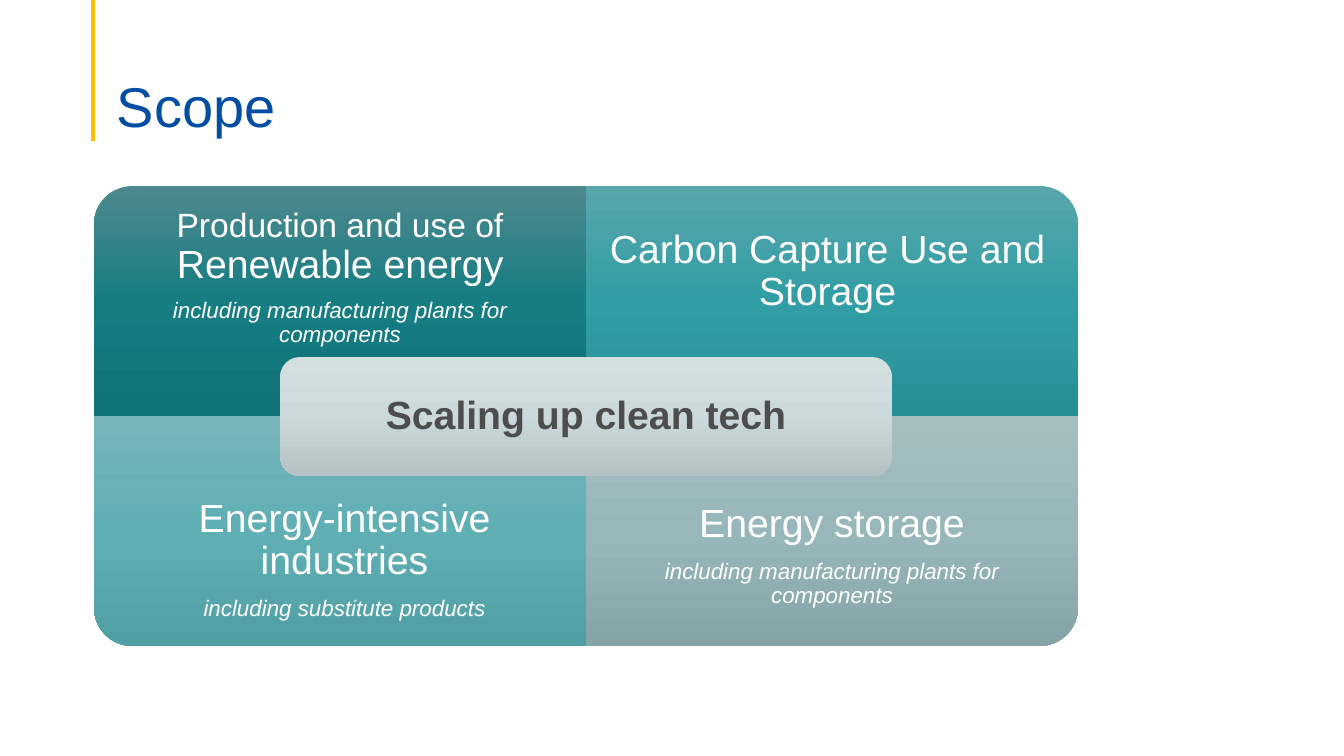
from dataclasses import dataclass

from lxml import etree
from pptx import Presentation, util as u
from pptx.dml.color import RGBColor
from pptx.enum import shapes, text
from pptx.oxml import ns

EMU_PER_PX = 914400 / 100.8
COLOURS = {"title": "034EA2", "rule": "FFC000", "light": "FFFFFF", "dark": "4D4D4D"}
FONT = "Arial"
LEFT, TOP, WIDTH, HEIGHT = 94, 186, 492, 230
PLANTS = "including manufacturing plants for components"


@dataclass(frozen=True)
class Box:
    left: int
    top: int
    width: int
    height: int

    def emu(self) -> list[u.Emu]:
        return [px(n) for n in (self.left, self.top, self.width, self.height)]

    def turned(self) -> "Box":
        """Swap width and height around the same centre."""
        shift = (self.width - self.height) // 2
        return Box(self.left + shift, self.top - shift, self.height, self.width)


@dataclass(frozen=True)
class Run:
    wording: str
    size: int


@dataclass(frozen=True)
class Quadrant:
    column: int
    row: int
    rotation: int
    gradient: tuple[str, str, str]
    text_box: Box
    inset: int
    heading: tuple[Run, ...]
    detail: str = ""


QUADRANTS = (
    Quadrant(0, 0, 270, ("4E898E", "167D83", "0F7379"), Box(94, 196, 492, 164), 19,
             (Run("Production and use of ", 24), Run("Renewable energy", 28)), PLANTS),
    Quadrant(1, 0, 0, ("58A6AC", "319EA5", "279097"), Box(586, 186, 483, 172), 22,
             (Run("Carbon Capture Use and Storage", 28),)),
    Quadrant(0, 1, 180, ("77B4BA", "5FAFB5", "509FA5"), Box(103, 474, 483, 172), 22,
             (Run("Energy-intensive industries", 28),), "including substitute products"),
    Quadrant(1, 1, 90, ("A5BEC0", "97B7BA", "85A4A7"), Box(586, 474, 492, 164), 22,
             (Run("Energy storage", 28),), PLANTS),
)


def px(length: int) -> u.Emu:
    return u.Emu(round(length * EMU_PER_PX))


def fill_gradient(shape, colours: tuple[str, str, str]) -> None:
    """Fill from top to bottom, whatever the rotation of the shape."""
    shape.fill.background()
    old_fill = shape._element.spPr.find(ns.qn("a:noFill"))
    gradient = etree.Element(ns.qn("a:gradFill"), rotWithShape="0")
    stops = etree.SubElement(gradient, ns.qn("a:gsLst"))
    for position, colour in zip((0, 50000, 100000), colours):
        stop = etree.SubElement(stops, ns.qn("a:gs"), pos=str(position))
        etree.SubElement(stop, ns.qn("a:srgbClr"), val=colour)
    etree.SubElement(gradient, ns.qn("a:lin"), ang="5400000", scaled="0")
    old_fill.getparent().replace(old_fill, gradient)


def add_panel(slide, kind, box: Box, gradient: tuple[str, str, str], rotation: int = 0):
    placed = box.turned() if rotation % 180 else box
    shape = slide.shapes.add_shape(kind, *placed.emu())
    shape.rotation = rotation
    shape.shadow.inherit = False
    shape.line.fill.background()
    fill_gradient(shape, gradient)
    return shape


def set_frame(shape, insets: tuple[int, int, int, int], anchor):
    frame = shape.text_frame
    frame.word_wrap = True
    frame.vertical_anchor = anchor
    (frame.margin_left, frame.margin_top,
     frame.margin_right, frame.margin_bottom) = [px(n) for n in insets]
    return frame


def write(paragraph, runs: tuple[Run, ...], colour: str, align=text.PP_ALIGN.CENTER,
          bold: bool = False, italic: bool = False) -> None:
    paragraph.alignment = align
    paragraph.line_spacing = 0.9
    paragraph.space_after = u.Pt(0.35 * runs[0].size)
    font = paragraph.font
    font.name, font.bold, font.italic = FONT, bold, italic
    font.size = u.Pt(runs[0].size)
    font.color.rgb = RGBColor.from_string(COLOURS[colour])
    for item in runs:
        run = paragraph.add_run()
        run.text = item.wording
        if item.size != runs[0].size:
            run.font.size = u.Pt(item.size)


def add_quadrant(slide, quadrant: Quadrant) -> None:
    box = Box(LEFT + quadrant.column * WIDTH, TOP + quadrant.row * HEIGHT, WIDTH, HEIGHT)
    add_panel(slide, shapes.MSO_SHAPE.ROUND_1_RECTANGLE, box, quadrant.gradient,
              quadrant.rotation)
    label = slide.shapes.add_textbox(*quadrant.text_box.emu())
    frame = set_frame(label, (quadrant.inset,) * 4, text.MSO_ANCHOR.MIDDLE)
    write(frame.paragraphs[0], quadrant.heading, "light")
    if quadrant.detail:
        write(frame.add_paragraph(), (Run(quadrant.detail, 16),), "light", italic=True)


def add_centre(slide) -> None:
    panel = add_panel(slide, shapes.MSO_SHAPE.ROUNDED_RECTANGLE, Box(280, 357, 612, 119),
                      ("D4DFE0", "CCD9DB", "B4C2C4"))
    frame = set_frame(panel, (18,) * 4, text.MSO_ANCHOR.MIDDLE)
    write(frame.paragraphs[0], (Run("Scaling up clean tech", 28),), "dark", bold=True)


def add_title(slide) -> None:
    rule = slide.shapes.add_connector(shapes.MSO_CONNECTOR.STRAIGHT,
                                      px(93), px(0), px(93), px(141))
    rule.line.color.rgb = RGBColor.from_string(COLOURS["rule"])
    rule.line.width = u.Pt(2.25)
    etree.SubElement(rule._element.spPr, ns.qn("a:effectLst"))
    title = slide.shapes.add_textbox(*Box(107, 53, 1159, 87).emu())
    frame = set_frame(title, (10, 5, 10, 0), text.MSO_ANCHOR.BOTTOM)
    write(frame.paragraphs[0], (Run("Scope", 40),), "title", text.PP_ALIGN.LEFT)
    frame.paragraphs[0].space_after = u.Pt(0)


def main() -> None:
    presentation = Presentation()
    presentation.slide_width, presentation.slide_height = px(1344), px(756)
    slide = presentation.slides.add_slide(presentation.slide_layouts[6])
    add_title(slide)
    for quadrant in QUADRANTS:
        add_quadrant(slide, quadrant)
    add_centre(slide)
    presentation.save("out.pptx")


if __name__ == "__main__":
    main()
